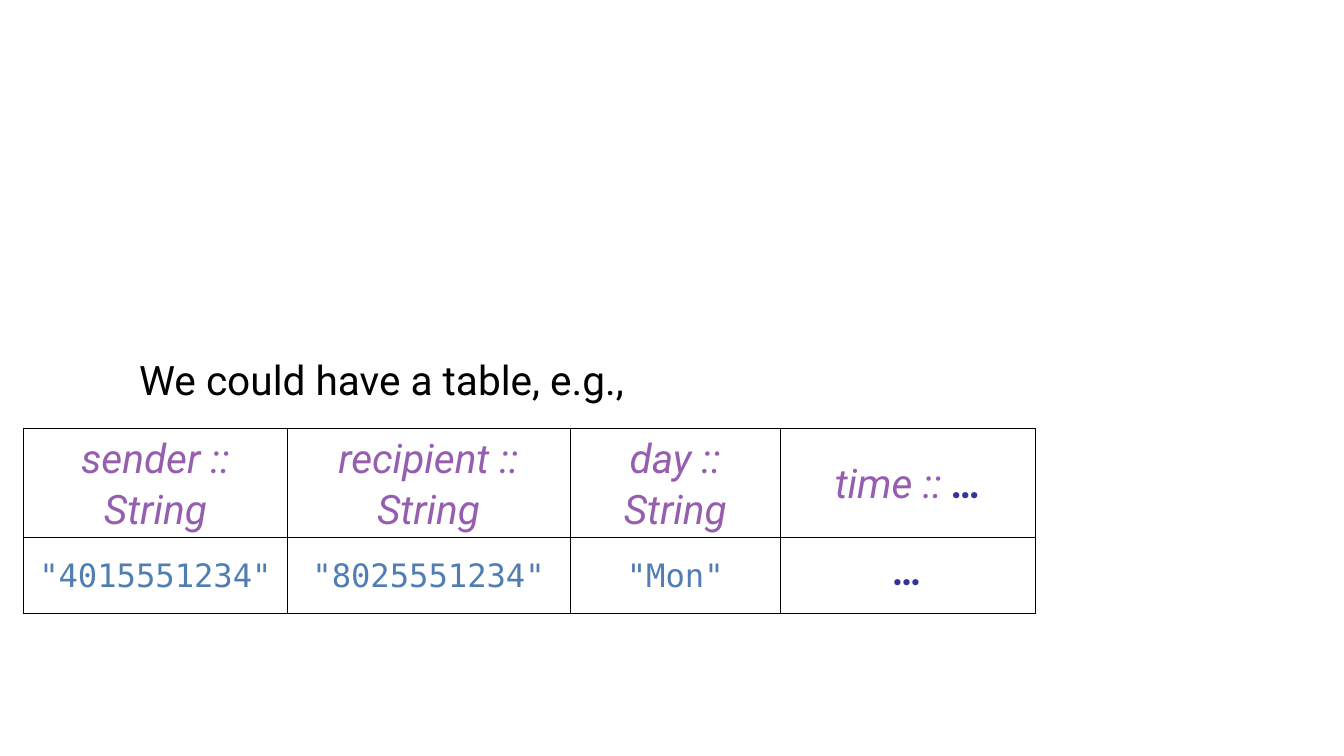
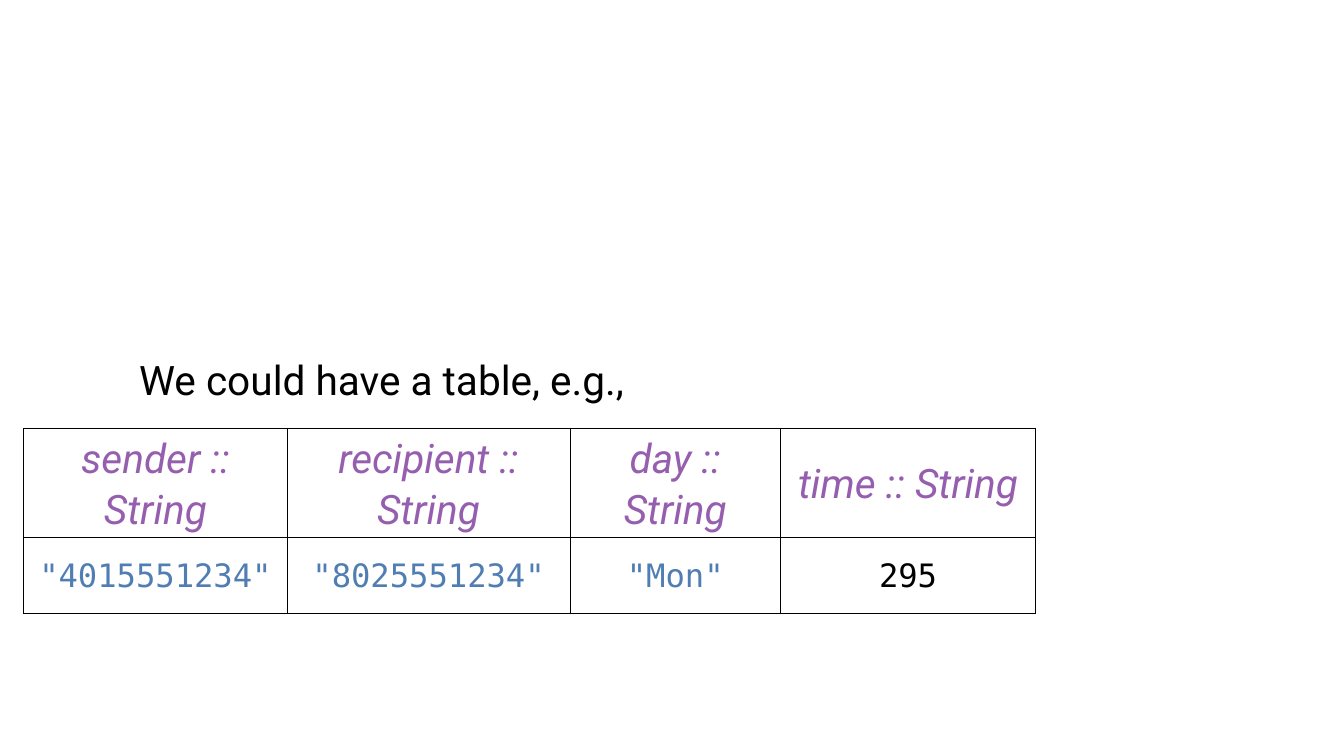
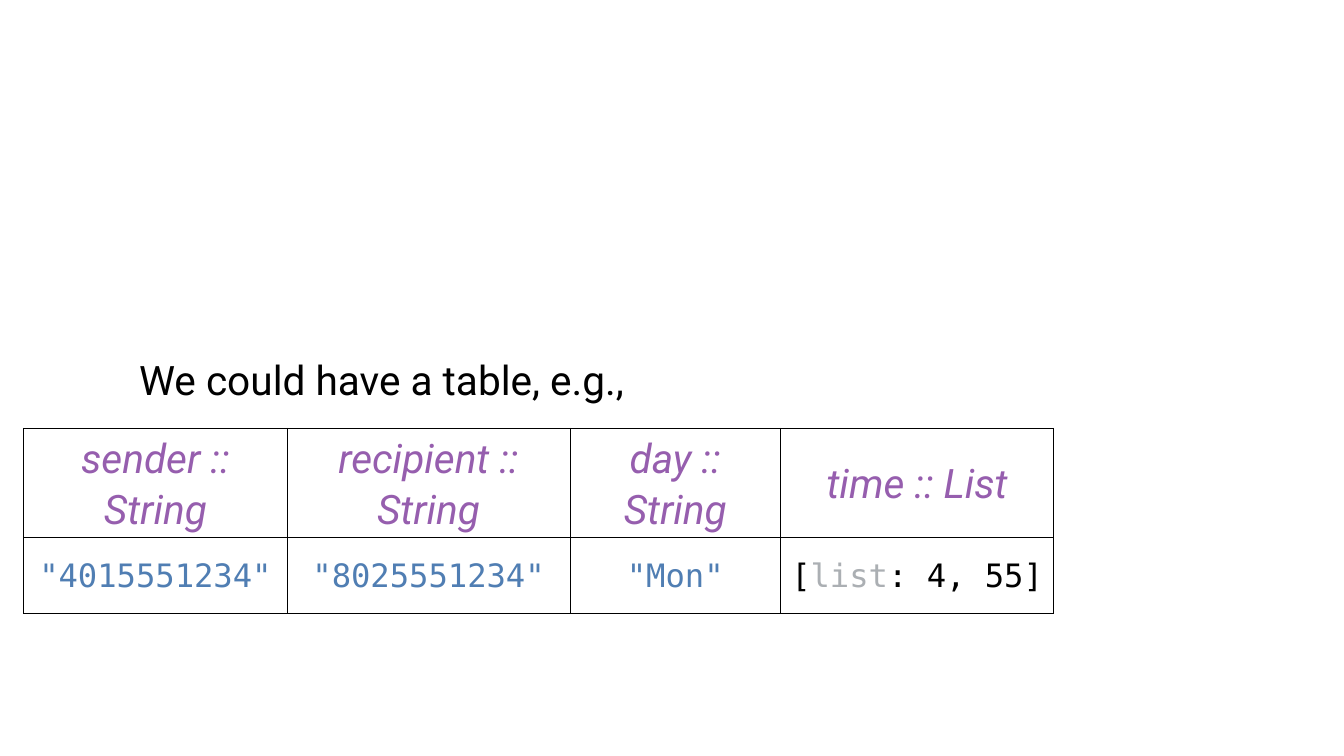
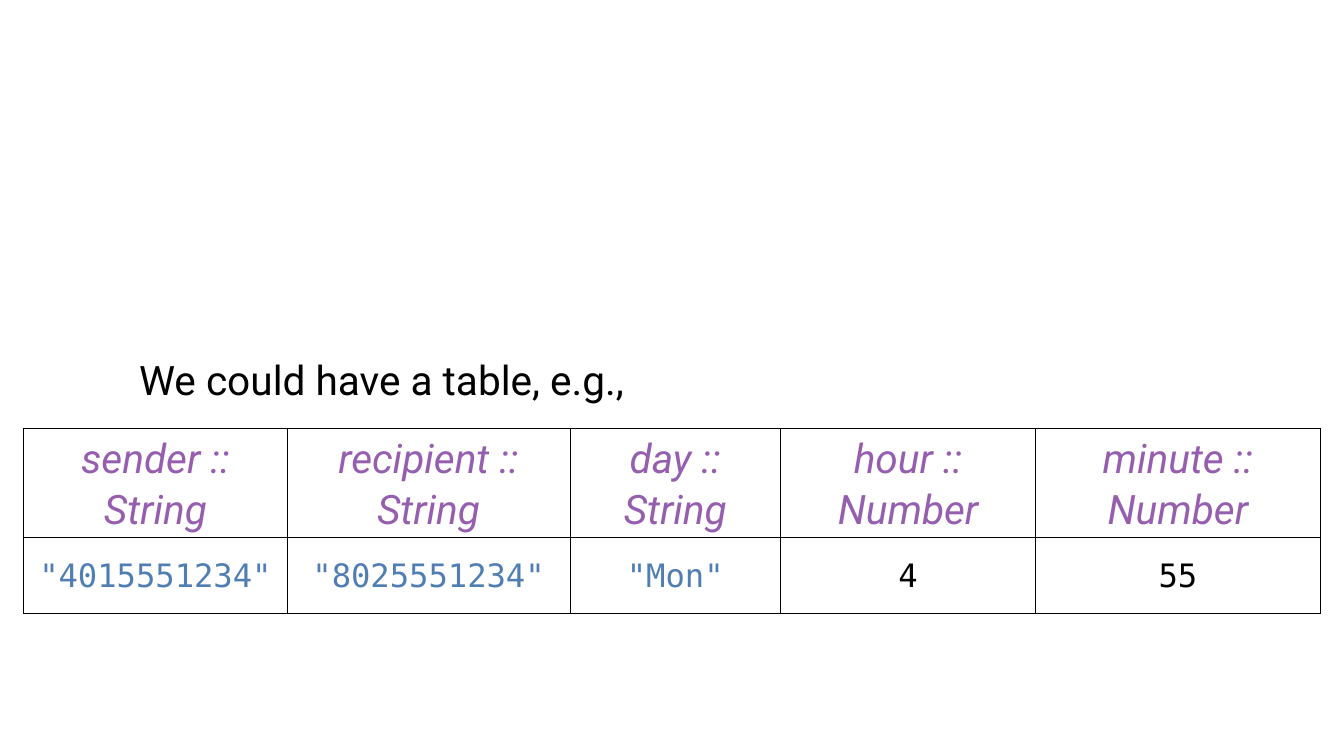
from lxml import etree
from pptx import Presentation, util as u
from pptx.dml.color import RGBColor
from pptx.enum import text
from pptx.oxml import ns

BLACK, WHITE = "000000", "FFFFFF"
SANS, MONO = ("Roboto", 58), ("DejaVu Sans Mono", 46)
BODY = (*SANS, BLACK, False, False)
HEADER = (*SANS, "965EAE", False, True)
ELLIPSIS = (*SANS, "333399", True, True)
STRING = (*MONO, "507EB3", False, False)
NUMBER = (*MONO, BLACK, False, False)
KEYWORD = (*MONO, "ABAFB3", False, False)
NO_STYLE = "{2D5ABB26-0587-4C30-8999-92F81FD0307C}"

SHARED = [
    (5.23, [("sender :: String", HEADER)], [('"4015551234"', STRING)]),
    (5.61, [("recipient :: String", HEADER)], [('"8025551234"', STRING)]),
    (4.18, [("day :: String", HEADER)], [('"Mon"', STRING)]),
]
TIME_COLUMNS = [
    [(5.06, [("time :: ", HEADER), ("…", ELLIPSIS)], [("…", ELLIPSIS)])],
    [(5.06, [("time :: String", HEADER)], [("295", NUMBER)])],
    [(5.42, [("time :: List", HEADER)],
      [("[", NUMBER), ("list", KEYWORD), (": 4, 55]", NUMBER)])],
    [(5.06, [("hour :: Number", HEADER)], [("4", NUMBER)]),
     (5.65, [("minute :: Number", HEADER)], [("55", NUMBER)])],
]
ROW_HEIGHTS = [2.03, 1.51]


def color(value):
    return RGBColor.from_string(value)


def write(holder, runs, align, spacing, before, inset):
    tf = holder.text_frame
    tf.word_wrap = True
    holder.vertical_anchor = tf.vertical_anchor = text.MSO_ANCHOR.MIDDLE
    for side in ("left", "top", "right", "bottom"):
        setattr(holder, f"margin_{side}", u.Inches(inset))
        setattr(tf, f"margin_{side}", u.Inches(inset))
    p = tf.paragraphs[0]
    p.alignment = align
    p.line_spacing = u.Pt(spacing)
    p.space_before = u.Pt(before)
    for words, (face, size, ink, bold, italic) in runs:
        r = p.add_run()
        r.text = words
        r.font.name, r.font.size = face, u.Pt(size)
        r.font.bold, r.font.italic = bold, italic
        r.font.color.rgb = color(ink)
    return p


prs = Presentation()
prs.slide_width, prs.slide_height = u.Inches(26.67), u.Inches(15)
fill = prs.slide_master.background.fill
fill.solid()
fill.fore_color.rgb = color(WHITE)

for time_columns in TIME_COLUMNS:
    s = prs.slides.add_slide(prs.slide_layouts[1])
    title = s.shapes.title.element
    title.getparent().remove(title)

    body = s.placeholders[1]
    body.left, body.top = u.Inches(2.68), u.Inches(0.28)
    body.width, body.height = u.Inches(17.07), u.Inches(14.45)
    body.text_frame.auto_size = text.MSO_AUTO_SIZE.NONE
    p = write(body, [("We could have a table, e.g.,", BODY)],
              text.PP_ALIGN.LEFT, 73, 37, 0.08)
    pPr = p._p.get_or_add_pPr()
    pPr.set("marL", "0")
    pPr.set("indent", "0")
    etree.SubElement(pPr, ns.qn("a:buNone"))

    columns = SHARED + time_columns
    last = len(columns) - 1
    width = sum(column[0] for column in columns)
    frame = s.shapes.add_table(2, len(columns), u.Inches(0.47), u.Inches(8.5),
                               u.Inches(width), u.Inches(sum(ROW_HEIGHTS)))
    table = frame.table
    table.first_row = table.horz_banding = False
    table._tbl.tblPr.find(ns.qn("a:tableStyleId")).text = NO_STYLE
    for row, height in zip(table.rows, ROW_HEIGHTS):
        row.height = u.Inches(height)

    for col, (col_width, header, value) in enumerate(columns):
        table.columns[col].width = u.Inches(col_width)
        for row, runs in enumerate((header, value)):
            cell = table.cell(row, col)
            spacing, before = (56, 0) if row else (73, 37)
            write(cell, runs, text.PP_ALIGN.CENTER, spacing, before, 0.07)
            if row:
                cell.fill.solid()
                cell.fill.fore_color.rgb = color(WHITE)
            else:
                cell.fill.background()
            tcPr = cell._tc.get_or_add_tcPr()
            edges = [("L", col == 0), ("R", col == last), ("T", row == 0), ("B", row == 1)]
            for i, (side, outer) in enumerate(edges):
                ln = etree.Element(ns.qn(f"a:ln{side}"), w=str(u.Pt(2 if outer else 1)))
                solid = etree.SubElement(ln, ns.qn("a:solidFill"))
                etree.SubElement(solid, ns.qn("a:srgbClr"), val=BLACK)
                tcPr.insert(i, ln)

prs.save("out.pptx")
